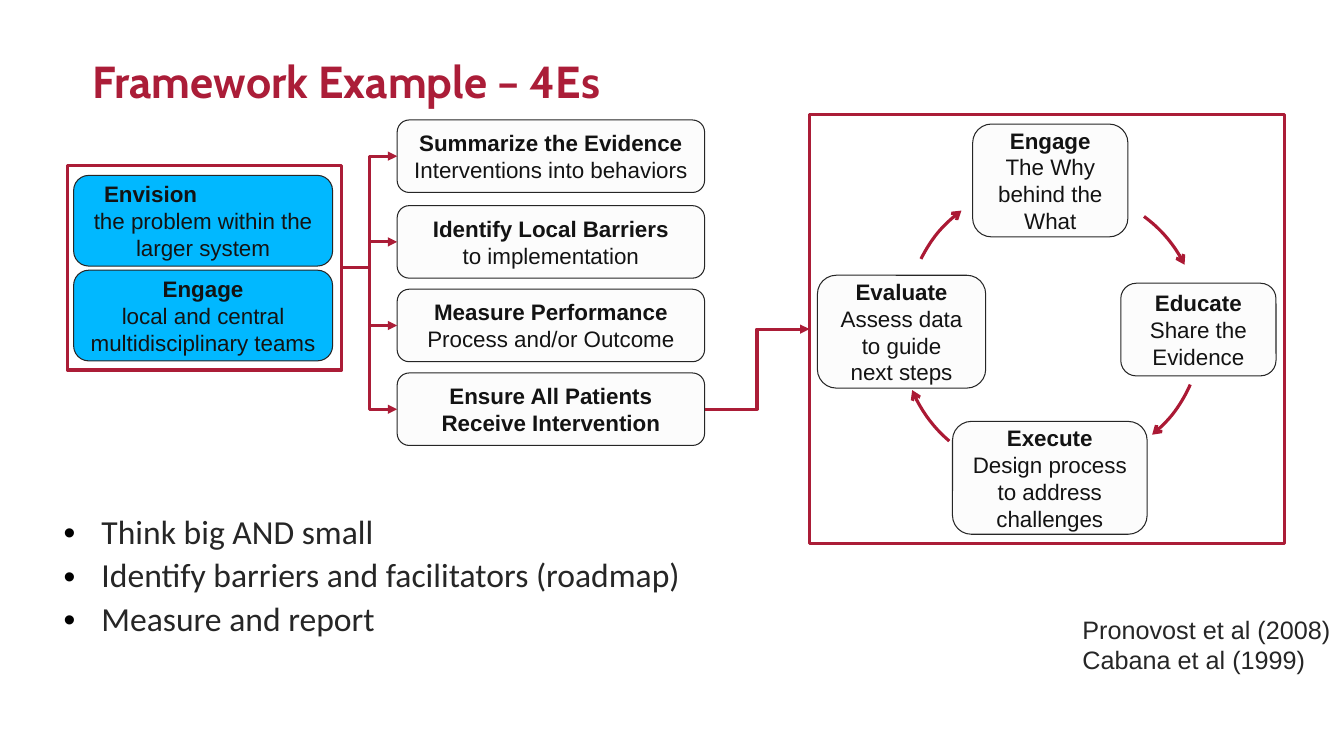
from dataclasses import dataclass

from lxml.etree import SubElement
from pptx import Presentation
from pptx.dml.color import RGBColor
from pptx.enum.shapes import MSO_CONNECTOR, MSO_SHAPE
from pptx.enum.text import MSO_ANCHOR, PP_ALIGN
from pptx.oxml.ns import qn
from pptx.shapes.autoshape import Shape
from pptx.slide import Slide
from pptx.text.text import TextFrame
from pptx.util import Pt

COLORS = {
    "title": "AB1D38",
    "frame": "AB1D37",
    "cycle": "AB1934",
    "vision": "01B8FF",
    "step": "FCFCFC",
    "outline": "262626",
    "label": "131313",
    "bullet": "000000",
}
CYCLE_SIZE = 190.8
ARC_START, ARC_SWEEP = 206.3, 27.3
ARC_UNIT = 0.6


@dataclass(frozen=True)
class Card:
    left: float
    top: float
    width: float
    height: float
    heading: str
    details: tuple[str, ...] = ()
    fill: str = "step"
    heading_indent: float = 0


@dataclass(frozen=True)
class CycleArc:
    left: float
    top: float
    turn: float


VISION_CARDS = [
    Card(52.6, 125.3, 185, 64.8, "Envision",
         ("the problem within the larger system",), "vision", 11.5),
    Card(52.6, 193, 185, 64.8, "Engage",
         ("local and central multidisciplinary teams",), "vision"),
]
STEP_CARDS = [
    Card(283.7, top, 219.6, 51.8, heading, details)
    for top, heading, details in [
        (85.7, "Summarize the Evidence", ("Interventions into behaviors",)),
        (146.9, "Identify Local Barriers", ("to implementation",)),
        (206.6, "Measure Performance", ("Process and/or Outcome",)),
        (266.4, "Ensure All Patients Receive Intervention", ()),
    ]
]
CYCLE_CARDS = [
    Card(694.8, 88.6, 110.9, 80.6, "Engage", ("The Why behind the What",)),
    Card(680.4, 301, 139, 80.6, "Execute", ("Design process to address challenges",)),
    Card(583.9, 196.6, 120.2, 80.6, "Evaluate", ("Assess data to guide", "next steps")),
    Card(800.6, 202.3, 110.9, 66.2, "Educate", ("Share the Evidence",)),
]
CYCLE_ARCS = [
    CycleArc(648, 131.8, 0),
    CycleArc(665.3, 136.1, 100),
    CycleArc(667.4, 141.1, 177.3),
    CycleArc(644.4, 146.9, 284),
]
TAKEAWAYS = [
    "Think big AND small",
    "Identify barriers and facilitators (roadmap)\nMeasure and report",
]


def color(name: str) -> RGBColor:
    return RGBColor.from_string(COLORS[name])


def style_text(frame: TextFrame, font: str, size: float, tint: str, bold: bool = False) -> None:
    for paragraph in frame.paragraphs:
        for run in paragraph.runs:
            run.font.name = font
            run.font.size = Pt(size)
            run.font.bold = bold
            run.font.color.rgb = color(tint)


def add_arrowhead(arrow, style: str) -> None:
    SubElement(arrow.line._get_or_add_ln(), qn("a:tailEnd"), type=style)


def draw_card(slide: Slide, card: Card) -> Shape:
    box = slide.shapes.add_shape(MSO_SHAPE.ROUNDED_RECTANGLE, Pt(card.left), Pt(card.top),
                                 Pt(card.width), Pt(card.height))
    box.shadow.inherit = False
    box.fill.solid()
    box.fill.fore_color.rgb = color(card.fill)
    box.line.color.rgb = color("outline")
    box.line.width = Pt(0.75)
    label = box.text_frame
    label.word_wrap = True
    label.vertical_anchor = MSO_ANCHOR.MIDDLE
    label.text = "\n".join((card.heading, *card.details))
    style_text(label, "Arial", 16, "label")
    for paragraph in label.paragraphs:
        paragraph.alignment = PP_ALIGN.CENTER
    heading = label.paragraphs[0]
    heading.runs[0].font.bold = True
    if card.heading_indent:
        heading.alignment = PP_ALIGN.LEFT
        heading._p.get_or_add_pPr().set("marL", str(Pt(card.heading_indent)))
    return box


def draw_frame(slide: Slide, left: float, top: float, width: float, height: float) -> Shape:
    frame = slide.shapes.add_shape(MSO_SHAPE.RECTANGLE, Pt(left), Pt(top), Pt(width), Pt(height))
    frame.shadow.inherit = False
    frame.fill.background()
    frame.line.color.rgb = color("frame")
    frame.line.width = Pt(2.25)
    return frame


def draw_flow(slide: Slide, source: Shape, target: Shape) -> None:
    flow = slide.shapes.add_connector(MSO_CONNECTOR.ELBOW, 0, 0, 0, 0)
    flow.begin_connect(source, 3)
    flow.end_connect(target, 1)
    flow.line.color.rgb = color("frame")
    flow.line.width = Pt(2.25)
    add_arrowhead(flow, "triangle")
    SubElement(flow._element.spPr, qn("a:effectLst"))


def draw_arc(slide: Slide, cycle_arc: CycleArc) -> None:
    arc = slide.shapes.add_shape(MSO_SHAPE.ARC, Pt(cycle_arc.left), Pt(cycle_arc.top),
                                 Pt(CYCLE_SIZE), Pt(CYCLE_SIZE))
    start = (ARC_START + cycle_arc.turn) % 360
    arc.adjustments[0] = start * ARC_UNIT
    arc.adjustments[1] = (start + ARC_SWEEP) % 360 * ARC_UNIT
    arc.shadow.inherit = False
    arc.fill.background()
    arc.line.color.rgb = color("cycle")
    arc.line.width = Pt(2.25)
    add_arrowhead(arc, "arrow")


def draw_title(slide: Slide) -> None:
    title = slide.shapes.add_textbox(Pt(66.2), Pt(28.8), Pt(828), Pt(62.6)).text_frame
    title.word_wrap = True
    title.margin_left = title.margin_right = 0
    title.vertical_anchor = MSO_ANCHOR.MIDDLE
    title.text = "Framework Example – 4Es"
    title.paragraphs[0].line_spacing = 0.9
    style_text(title, "Cabin", 32, "title", bold=True)


def draw_takeaways(slide: Slide) -> None:
    takeaways = slide.shapes.add_table(2, 1, Pt(42.5), Pt(364.3), Pt(490.3), Pt(90)).table
    takeaways.first_row = takeaways.horz_banding = False
    for row, height, text in zip(takeaways.rows, (30, 60), TAKEAWAYS):
        row.height = Pt(height)
        cell = row.cells[0]
        cell.fill.background()
        cell.margin_left = cell.margin_right = Pt(3)
        cell.margin_top = cell.margin_bottom = 0
        cell.text_frame.text = text
        for paragraph in cell.text_frame.paragraphs:
            properties = paragraph._p.get_or_add_pPr()
            properties.set("marL", str(Pt(27)))
            properties.set("indent", str(Pt(-27)))
            tint = SubElement(properties, qn("a:buClr"))
            SubElement(tint, qn("a:srgbClr"), val=COLORS["bullet"])
            SubElement(properties, qn("a:buFont"), typeface="Arial")
            SubElement(properties, qn("a:buChar"), char="•")
            paragraph.line_spacing = 1.07
        style_text(cell.text_frame, "Calibri", 24, "outline")


def draw_citations(slide: Slide) -> None:
    citations = slide.shapes.add_textbox(Pt(766.1), Pt(434.9), Pt(193), Pt(51.1)).text_frame
    citations.word_wrap = False
    citations.text = "Pronovost et al (2008)\nCabana et al (1999)"
    style_text(citations, "Arial", 18, "outline")


def main() -> None:
    deck = Presentation()
    deck.slide_width, deck.slide_height = Pt(960), Pt(540)
    slide = deck.slides.add_slide(deck.slide_layouts[6])
    draw_title(slide)
    draw_takeaways(slide)
    for card in VISION_CARDS:
        draw_card(slide, card)
    vision_frame = draw_frame(slide, 48.2, 118.1, 195.8, 146.2)
    steps = [draw_card(slide, card) for card in STEP_CARDS]
    for step in steps:
        draw_flow(slide, vision_frame, step)
    for cycle_arc in CYCLE_ARCS:
        draw_arc(slide, cycle_arc)
    for card in CYCLE_CARDS:
        draw_card(slide, card)
    cycle_frame = draw_frame(slide, 578.2, 82.1, 339.1, 306)
    draw_flow(slide, steps[-1], cycle_frame)
    draw_citations(slide)
    deck.save("out.pptx")


if __name__ == "__main__":
    main()
